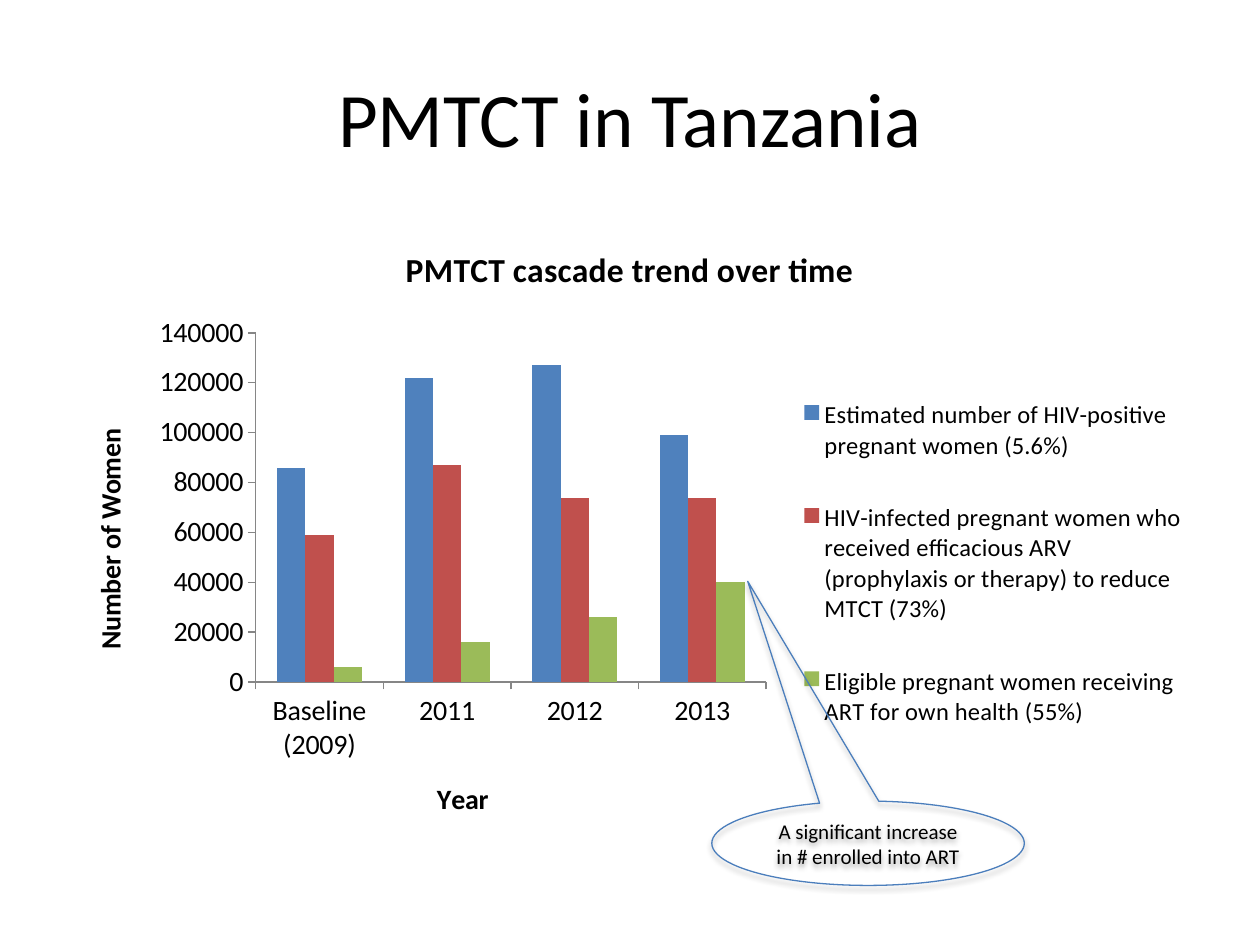
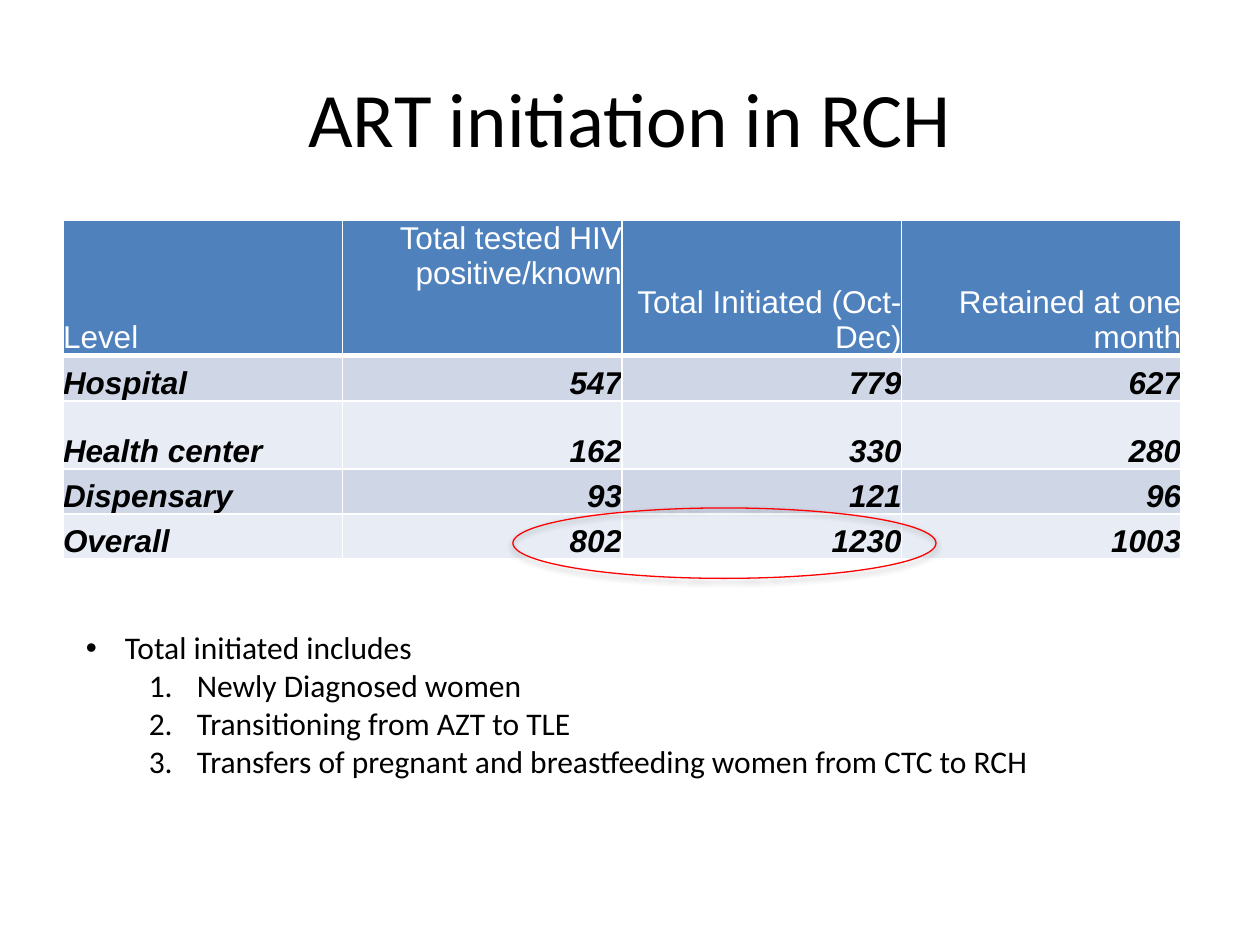
"""Build two slides on PMTCT and ART initiation."""
from lxml import etree
from pptx import Presentation
from pptx import util as u
from pptx.chart import data as cd
from pptx.dml.color import RGBColor
from pptx.enum import chart as ch, shapes, text
from pptx.oxml import parse_xml
from pptx.oxml.ns import nsdecls, qn

FONT = "Calibri"
BLACK, WHITE, RED, OUTLINE, AXIS = "000000", "FFFFFF", "FF0000", "4B7EBC", "868686"
BLUE, BRICK, GREEN = "4F81BD", "C0504D", "9BBB59"
BANDS = ("CFD7E7", "E8ECF4")
LEFT, TOP, WIDTH = 1.27, 4.45, 22.86
CENTER, RIGHT = text.PP_ALIGN.CENTER, text.PP_ALIGN.RIGHT
MIDDLE, BOTTOM = text.MSO_ANCHOR.MIDDLE, text.MSO_ANCHOR.BOTTOM

YEARS = ("Baseline (2009)", "2011", "2012", "2013")
SERIES = (
    ("Estimated number of HIV-positive pregnant women (5.6%)",
     (86000, 122000, 127000, 99000), BLUE),
    ("HIV-infected pregnant women who received efficacious ARV "
     "(prophylaxis or therapy) to reduce MTCT (73%)",
     (59000, 87000, 74000, 74000), BRICK),
    ("Eligible pregnant women receiving ART for own health (55%)",
     (6000, 16000, 26000, 40000), GREEN),
)
LEVELS = (
    ("Level", "Total tested HIV positive/known", "Total Initiated (Oct-Dec)",
     "Retained at one month"),
    ("Hospital", "547", "779", "627"),
    ("Health center", "162", "330", "280"),
    ("Dispensary", "93", "121", "96"),
    ("Overall", "802", "1230", "1003"),
)
ROW_HEIGHTS = (2.72, 0.91, 1.37, 0.91, 0.91)
INITIATED = ("Newly Diagnosed women", "Transitioning from AZT to TLE",
             "Transfers of pregnant and breastfeeding women from CTC to RCH")


def rgb(color):
    """Turn a hex string into a colour."""
    return RGBColor.from_string(color)


def box(x, y, w, h):
    """Give a position and size in centimetres."""
    return u.Cm(x), u.Cm(y), u.Cm(w), u.Cm(h)


def set_font(font, size, color=BLACK, name=FONT, bold=False, italic=False):
    """Format a font."""
    font.size, font.name, font.bold, font.italic = u.Pt(size), name, bold, italic
    font.color.rgb = rgb(color)


def write(p, words, align=None, **style):
    """Write one formatted run into a paragraph."""
    r = p.add_run()
    r.text = words
    p.alignment = align
    set_font(r.font, **style)


def no_margins(target):
    """Remove the inner margins of a cell or text frame."""
    target.margin_left = target.margin_right = 0
    target.margin_top = target.margin_bottom = 0


def add_titled_slide(prs, title):
    """Add a title-only slide."""
    s = prs.slides.add_slide(prs.slide_layouts[5])
    sp = s.shapes.title
    sp.left, sp.top, sp.width, sp.height = box(LEFT, 0.76, WIDTH, 3.18)
    sp.text_frame.vertical_anchor = MIDDLE
    write(sp.text_frame.paragraphs[0], title, CENTER, size=44)
    return s


def add_outline(s, kind, place, color):
    """Add an unfilled shape with a thin line and a soft shadow."""
    sp = s.shapes.add_shape(kind, *box(*place))
    sp.fill.background()
    sp.line.color.rgb = rgb(color)
    sp.line.width = u.Pt(0.75)
    sp.shadow.inherit = False
    sp._element.spPr.find(qn("a:effectLst")).append(parse_xml(
        f'<a:outerShdw {nsdecls("a")} blurRad="{u.Pt(3.1)}" dist="{u.Pt(1.8)}" '
        'dir="5400000" rotWithShape="0"><a:srgbClr val="000000">'
        '<a:alpha val="35000"/></a:srgbClr></a:outerShdw>'))
    return sp


def place_part(part, x, y, w, h, inner=False):
    """Fix a chart part at fractions of the chart."""
    old = part.find(qn("c:layout"))
    if old is not None:
        part.remove(old)
    target = '<c:layoutTarget val="inner"/>' if inner else ""
    sizes = "".join(f'<c:{k} val="{v}"/>' for k, v in zip("xywh", (x, y, w, h)))
    layout = parse_xml(
        f'<c:layout {nsdecls("c")}><c:manualLayout>{target}<c:xMode val="edge"/>'
        f'<c:yMode val="edge"/>{sizes}</c:manualLayout></c:layout>')
    part.insert(0 if inner else 1, layout)


def format_axis(axis, title):
    """Title an axis and set its line, ticks and text."""
    write(axis.axis_title.text_frame.paragraphs[0], title, size=16, bold=True)
    axis.has_major_gridlines = False
    axis.major_tick_mark = ch.XL_TICK_MARK.OUTSIDE
    axis.format.line.color.rgb = rgb(AXIS)
    set_font(axis.tick_labels.font, 16)


def add_cascade_chart(s):
    """Add the clustered column chart."""
    data = cd.CategoryChartData()
    data.categories = YEARS
    for name, values, _ in SERIES:
        data.add_series(name, values)
    chart = s.shapes.add_chart(ch.XL_CHART_TYPE.COLUMN_CLUSTERED,
                               *box(LEFT, TOP, WIDTH, 12.57), data).chart
    set_font(chart.font, 16)
    write(chart.chart_title.text_frame.paragraphs[0],
          "PMTCT cascade trend over time", size=19.2, bold=True)
    plot = chart.plots[0]
    plot.gap_width, plot.overlap, plot.vary_by_categories = 150, 0, False
    for series, (_, _, color) in zip(plot.series, SERIES):
        series.format.fill.solid()
        series.format.fill.fore_color.rgb = rgb(color)
    format_axis(chart.category_axis, "Year")
    format_axis(chart.value_axis, "Number of Women")
    chart.value_axis.maximum_scale = 140000
    chart.value_axis.major_unit = 20000
    chart.has_legend = True
    chart.legend.position = ch.XL_LEGEND_POSITION.RIGHT
    chart.legend.include_in_layout = False
    set_font(chart.legend.font, 14)
    place_part(chart.legend._element, 0.65, 0.22, 0.34, 0.66)
    place_part(plot._element.getparent(), 0.17, 0.18, 0.45, 0.56, inner=True)


def add_callout(s, words):
    """Add the elliptical callout that points at the last column."""
    sp = add_outline(s, shapes.MSO_SHAPE.OVAL_CALLOUT,
                     (14.35, 16.15, 6.3, 1.7), OUTLINE)
    sp.adjustments[0], sp.adjustments[1] = -0.385, -3.106
    tf = sp.text_frame
    tf.word_wrap, tf.vertical_anchor = True, MIDDLE
    write(tf.paragraphs[0], words, CENTER, size=12)


def set_borders(cell, top=1, bottom=1):
    """Draw white borders round a cell."""
    for side, width in zip("LRTB", (1, 1, top, bottom)):
        cell._tc.get_or_add_tcPr().append(parse_xml(
            f'<a:ln{side} {nsdecls("a")} w="{u.Pt(width)}"><a:solidFill>'
            f'<a:srgbClr val="{WHITE}"/></a:solidFill></a:ln{side}>'))


def add_level_table(s):
    """Add the table of women by facility level."""
    table = s.shapes.add_table(len(LEVELS), len(LEVELS[0]), *box(
        LEFT, TOP, 22.54, sum(ROW_HEIGHTS))).table
    for i, (row, height) in enumerate(zip(LEVELS, ROW_HEIGHTS)):
        table.rows[i].height = u.Cm(height)
        body = i > 0
        for j, words in enumerate(row):
            cell = table.cell(i, j)
            set_borders(cell, top=3 if i == 1 else 1, bottom=1 if body else 3)
            cell.fill.solid()
            cell.fill.fore_color.rgb = rgb(BANDS[(i - 1) % 2] if body else BLUE)
            no_margins(cell)
            cell.vertical_anchor = BOTTOM
            write(cell.text_frame.paragraphs[0], words, RIGHT if j else None,
                  size=18, name="Arial", color=BLACK if body else WHITE,
                  bold=body, italic=body)
    table.cell(0, 1).vertical_anchor = text.MSO_ANCHOR.TOP


def set_bullet(p, left, hang, tag, **attrs):
    """Give a paragraph a hanging bullet or number."""
    pPr = p._p.get_or_add_pPr()
    pPr.set("marL", str(u.Cm(left)))
    pPr.set("indent", str(-u.Cm(hang)))
    if tag == "buChar":
        etree.SubElement(pPr, qn("a:buFont")).set("typeface", "Arial")
    etree.SubElement(pPr, qn("a:" + tag), attrs)


def add_notes_list(s):
    """Add the bullet and its numbered points."""
    tf = s.shapes.add_textbox(*box(1.73, 12.67, 22.07, 3.35)).text_frame
    tf.word_wrap = True
    no_margins(tf)
    p = tf.paragraphs[0]
    write(p, "Total initiated includes", size=18)
    set_bullet(p, 0.79, 0.79, "buChar", char="•")
    for words in INITIATED:
        p = tf.add_paragraph()
        p.level = 1
        write(p, words, size=18)
        set_bullet(p, 2.24, 0.97, "buAutoNum", type="arabicPeriod")


def main():
    """Build and save the slides."""
    prs = Presentation()
    prs.slide_width, prs.slide_height = u.Cm(25.4), u.Cm(19.05)
    s = add_titled_slide(prs, "PMTCT in Tanzania")
    add_cascade_chart(s)
    add_callout(s, "A significant increase in # enrolled into ART")
    s = add_titled_slide(prs, "ART initiation in RCH")
    add_level_table(s)
    add_outline(s, shapes.MSO_SHAPE.OVAL, (10.34, 10.24, 8.53, 1.42), RED)
    add_notes_list(s)
    prs.save("out.pptx")


if __name__ == "__main__":
    main()
